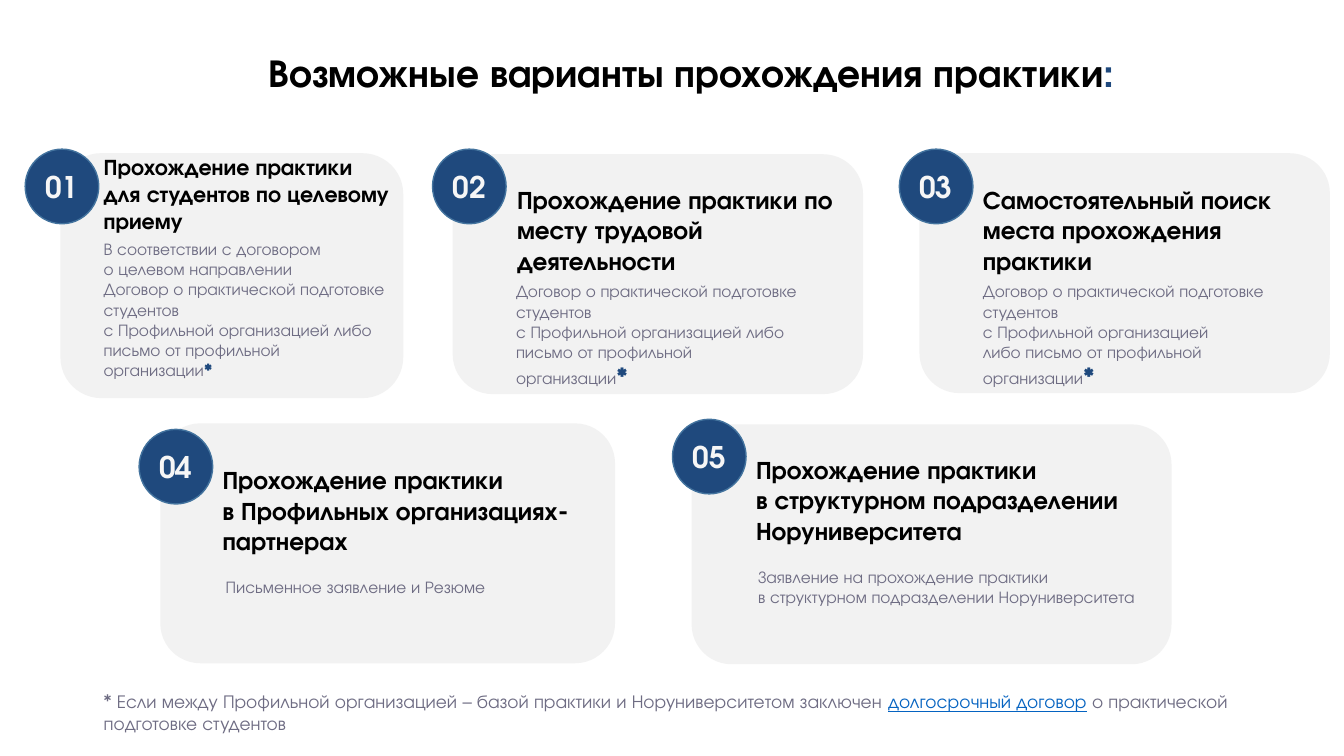
import pptx
import pptx.util
import pptx.dml.color
import pptx.enum.shapes
import pptx.enum.text

FONT = "TeX Gyre Adventor"
COLORS = {"black": "000000", "navy": "1F497D", "ring": "43739E", "card": "F2F2F2",
          "number": "F6F6F6", "muted": "6E6C83", "link": "0563C1"}

# The grid has square cells of 0.1 inch; boxes are (left, top, width, height) in cells.
CELL = pptx.util.Inches(0.1)
COLS, ROWS = 133.3, 75

HEADING = {"size": 18, "bold": True, "color": "black"}
SMALL_HEADING = {**HEADING, "size": 16}
BODY = {"size": 12, "color": "muted"}
NUMBER = {"size": 21.3, "bold": True, "color": "number"}
STAR = {"size": 16, "bold": True, "color": "navy"}
SMALL_STAR = {**STAR, "size": 12}
NOTE = {"size": 13.3, "color": "muted"}

AGREEMENT = "Договор о практической подготовке студентов"
LETTER = "либо письмо от профильной организации"
DEPARTMENT = "в структурном подразделении Норуниверситета"

# Badge, heading and body boxes are offsets from the card's corner.
CARDS = [
    {"box": (6, 15.2, 34, 24.3), "badge": (-3.5, -0.4),
     "heading": (3.3, -0.5, 30.8, 9.1), "heading_format": SMALL_HEADING,
     "title": ["Прохождение практики", "для студентов по целевому приему"],
     "body": (3.3, 8, 30, 15.1),
     "text": ["В соответствии с договором", "о целевом направлении", AGREEMENT,
              "с Профильной организацией " + LETTER],
     "star": SMALL_STAR},
    {"box": (44.9, 15.3, 40.7, 23.8), "badge": (-2, -0.5),
     "heading": (5.4, 2.5, 33.7, 10.1),
     "title": ["Прохождение практики по месту трудовой деятельности"],
     "body": (5.3, 12.1, 30, 11.8),
     "text": [AGREEMENT, "с Профильной организацией " + LETTER],
     "star": STAR},
    {"box": (91.2, 15.2, 40.7, 23.8), "badge": (-2, -0.4),
     "heading": (5.3, 2.6, 33.7, 10.1),
     "title": ["Самостоятельный поиск места прохождения практики"],
     "body": (5.3, 12.2, 30, 11.8),
     "text": [AGREEMENT, "с Профильной организацией", LETTER],
     "star": STAR},
    {"box": (15.9, 42, 45.1, 23.8), "badge": (-2.1, 0.6),
     "heading": (5.2, 3.6, 37.3, 10.1),
     "title": ["Прохождение практики", "в Профильных организациях-партнерах"],
     "body": (5.5, 14.7, 39.5, 3),
     "text": ["Письменное заявление и Резюме"]},
    {"box": (68.6, 42.1, 47.6, 23.8), "badge": (-1.9, -0.5),
     "heading": (5.4, 2.5, 43.8, 10.1),
     "title": ["Прохождение практики", DEPARTMENT],
     "body": (5.6, 13.6, 40.5, 7.1),
     "text": ["Заявление на прохождение практики", DEPARTMENT]},
]


def rgb(name):
    return pptx.dml.color.RGBColor.from_string(COLORS[name])


def cells(*values):
    return [int(v * CELL) for v in values]


def inside(box, part):
    """Move a part, given relative to the box's corner, onto the slide."""
    return (box[0] + part[0], box[1] + part[1], *part[2:])


def add_run(p, text, fmt):
    r = p.add_run()
    r.text = text
    r.font.name = FONT
    for key, value in fmt.items():
        if key == "color":
            r.font.color.rgb = rgb(value)
        else:
            setattr(r.font, key, pptx.util.Pt(value) if key == "size" else value)


def add_text(slide, box, paragraphs, wrap=True, grow=True):
    """Add a text box; each paragraph is a list of (text, format) runs."""
    tf = slide.shapes.add_textbox(*cells(*box)).text_frame
    tf.word_wrap = wrap
    if grow:
        tf.auto_size = pptx.enum.text.MSO_AUTO_SIZE.SHAPE_TO_FIT_TEXT
    for i, runs in enumerate(paragraphs):
        p = tf.add_paragraph() if i else tf.paragraphs[0]
        for text, fmt in runs:
            add_run(p, text, fmt)
    return tf


def add_panel(slide, kind, box, fill, line=None):
    sp = slide.shapes.add_shape(kind, *cells(*box))
    sp.shadow.inherit = False
    sp.fill.solid()
    sp.fill.fore_color.rgb = rgb(fill)
    if line:
        sp.line.color.rgb = rgb(line)
        sp.line.width = pptx.util.Pt(1)
    else:
        sp.line.fill.background()


def add_title(slide, box):
    fmt = {"size": 28, "bold": True, "color": "black"}
    tf = add_text(slide, box, [[("Возможные варианты прохождения практики", fmt),
                                (":", {**fmt, "color": "navy"})]], grow=False)
    p = tf.paragraphs[0]
    for key, value in {"alignment": pptx.enum.text.PP_ALIGN.CENTER, "line_spacing": 0.9,
                       "space_before": pptx.util.Pt(10)}.items():
        setattr(p, key, value)


def add_badge(slide, box, number):
    add_panel(slide, pptx.enum.shapes.MSO_SHAPE.OVAL, box, "navy", "ring")
    add_text(slide, inside(box, (1, 1.4, 5.4, 4.6)), [[(f"{number:02}", NUMBER)]], wrap=False)


def add_card(slide, box, number, card):
    add_panel(slide, pptx.enum.shapes.MSO_SHAPE.ROUNDED_RECTANGLE, box, "card")
    fmt = card.get("heading_format", HEADING)
    add_text(slide, inside(box, card["heading"]), [[(line, fmt)] for line in card["title"]])
    body = [[(line, BODY)] for line in card["text"]]
    if "star" in card:
        body[-1].append(("*", card["star"]))
    add_text(slide, inside(box, card["body"]), body)
    add_badge(slide, inside(box, (*card["badge"], 7.3, 7.4)), number)


def add_footnote(slide, box):
    add_text(slide, box, [[
        ("* Если между Профильной организацией – базой практики и Норуниверситетом заключен ",
         NOTE),
        ("долгосрочный договор", {**NOTE, "color": "link", "underline": True}),
        (" о практической подготовке студентов", NOTE)]])


def main():
    prs = pptx.Presentation()
    prs.slide_width, prs.slide_height = cells(COLS, ROWS)
    slide = prs.slides.add_slide(prs.slide_layouts[6])
    add_title(slide, (5.9, 4.8, 125.4, 10.1))
    for number, card in enumerate(CARDS, 1):
        add_card(slide, card["box"], number, card)
    add_footnote(slide, (9.3, 67.9, 117.2, 5.5))
    prs.save("out.pptx")


if __name__ == "__main__":
    main()
